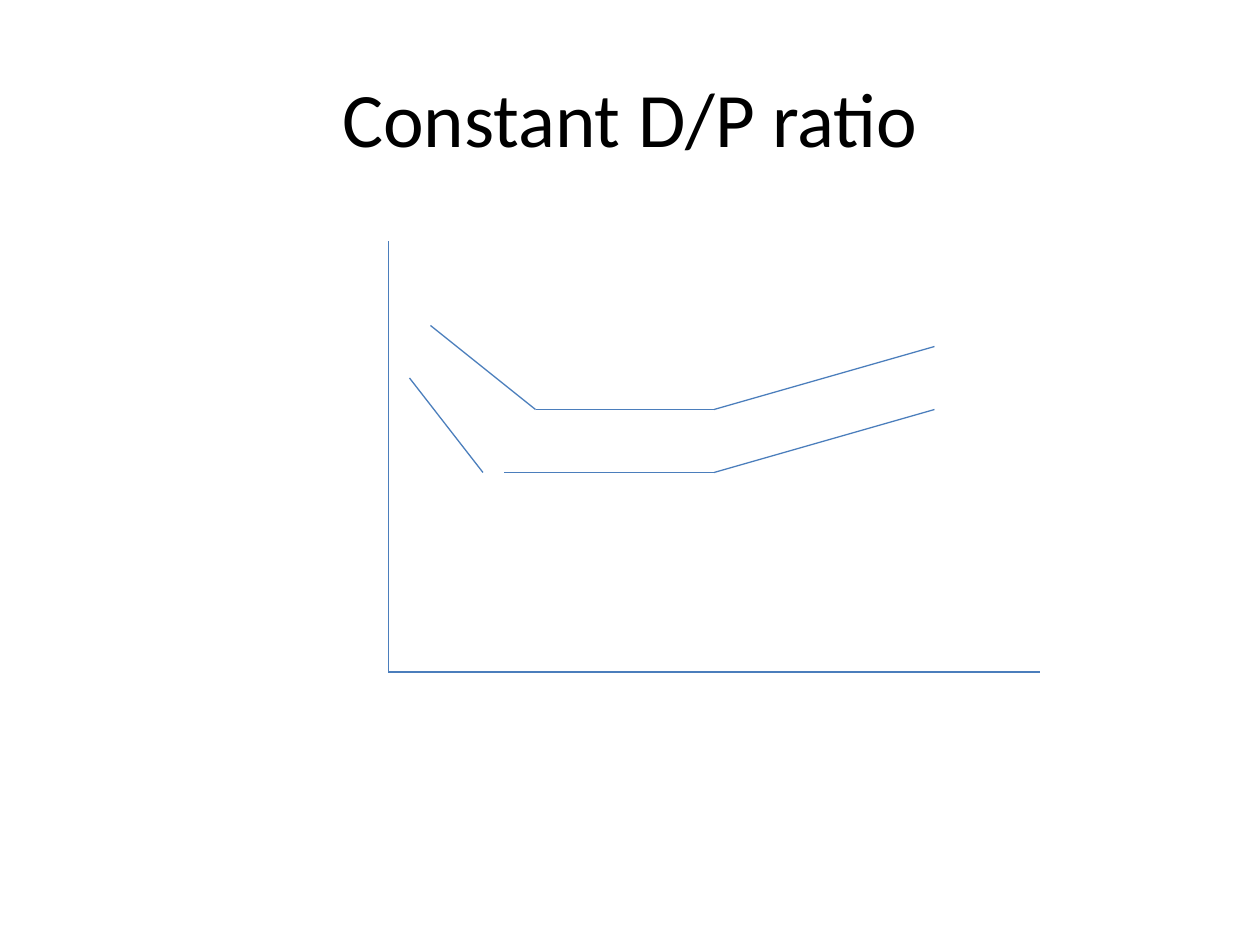
from itertools import pairwise

from lxml import etree
from pptx import Presentation
from pptx import util as u
from pptx.dml.color import RGBColor
from pptx.enum import shapes, text
from pptx.oxml.ns import qn

PX = u.Inches(1) // 120  # 120 px to the inch


def px(n):
    return u.Emu(n * PX)


def color(hex_string):
    return RGBColor.from_string(hex_string)


def write(tf, content, size=44, font="Calibri", fill="000000",
          align=text.PP_ALIGN.CENTER, anchor=text.MSO_ANCHOR.MIDDLE):
    tf.word_wrap = True
    tf.vertical_anchor = anchor
    p = tf.paragraphs[0]
    p.alignment = align
    r = p.add_run()
    r.text = content
    r.font.size = u.Pt(size)
    r.font.name = font
    r.font.color.rgb = color(fill)


class Deck:
    line_color = "4B7EBC"
    line_width = 0.75

    def __init__(self, width, height):
        self.prs = Presentation()
        self.prs.slide_width, self.prs.slide_height = px(width), px(height)

    def slide(self):
        self.s = self.prs.slides.add_slide(self.prs.slide_layouts[5])
        bg = self.s.background.fill
        bg.solid()
        bg.fore_color.rgb = color("FFFFFF")

    def title(self, content, x, y, w, h):
        sp = self.s.shapes.title
        sp.left, sp.top, sp.width, sp.height = map(px, (x, y, w, h))
        write(sp.text_frame, content)

    def line(self, start, end):
        ln = self.s.shapes.add_connector(
            shapes.MSO_CONNECTOR.STRAIGHT, *map(px, start + end))
        ln.line.color.rgb = color(self.line_color)
        ln.line.width = u.Pt(self.line_width)
        etree.SubElement(ln._element.spPr, qn("a:effectLst"))

    def path_lines(self, *points):
        for start, end in pairwise(points):
            self.line(start, end)


def main():
    deck = Deck(1200, 900)
    deck.slide()
    deck.title("Constant D/P ratio", 60, 36, 1080, 150)

    # Axes
    origin = (370, 640)
    deck.line(origin, (990, 640))
    deck.line(origin, (370, 230))

    # Upper curve
    deck.path_lines((410, 310), (510, 390), (680, 390), (890, 330))

    # Lower curve, with a gap after its falling part
    deck.line((390, 360), (460, 450))
    deck.path_lines((480, 450), (680, 450), (890, 390))

    deck.prs.save("out.pptx")


if __name__ == "__main__":
    main()
